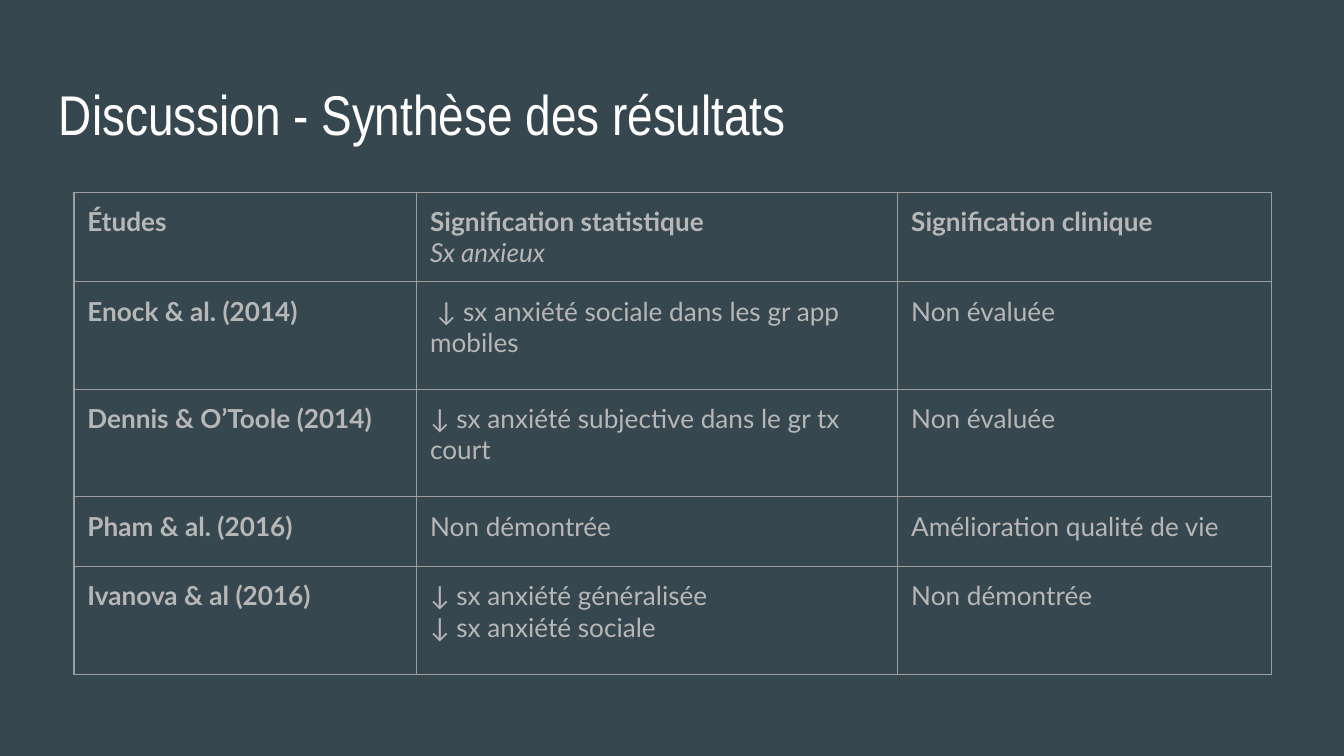
from lxml import etree
from pptx import Presentation
from pptx.dml.color import RGBColor
from pptx.enum.text import MSO_ANCHOR
from pptx.oxml.ns import qn
from pptx.util import Inches, Pt

TOP = MSO_ANCHOR.TOP
EDGE = "9E9E9E"
SIDES = ("left", "right", "top", "bottom")
HEAD = {"name": "Arial Narrow", "size": Pt(30)}
BODY = {"name": "Lato", "size": Pt(14), "bold": False}
BOLD = {**BODY, "bold": True}
NOTE = {**BODY, "italic": True}


def color(code):
    return RGBColor.from_string(code)


def write(para, text, style, code):
    run = para.add_run()
    run.text = text
    for key, value in style.items():
        setattr(run.font, key, value)
    run.font.color.rgb = color(code)


# Widescreen slide, 16 to 9
prs = Presentation()
prs.slide_width = Inches(10)
prs.slide_height = Inches(10 * 9 / 16)
slide = prs.slides.add_slide(prs.slide_layouts[6])
slide.background.fill.solid()
slide.background.fill.fore_color.rgb = color("37474F")

# Title
box = slide.shapes.add_textbox(Inches(0.34), Inches(0.49), Inches(9.32), Inches(0.63))
frame = box.text_frame
frame.word_wrap = True
frame.vertical_anchor = TOP
for side in SIDES:
    setattr(frame, "margin_" + side, Inches(0.1))
write(frame.paragraphs[0], "Discussion - Synthèse des résultats", HEAD, "FFFFFF")

# Study results, one list of lines per cell
rows = [
    (["Études"], ["Signification statistique", "Sx anxieux"], ["Signification clinique"]),
    (["Enock & al. (2014)"], [" ↓ sx anxiété sociale dans les gr app mobiles"], ["Non évaluée"]),
    (["Dennis & O’Toole (2014)"], ["↓ sx anxiété subjective dans le gr tx court"], ["Non évaluée"]),
    (["Pham & al. (2016)"], ["Non démontrée"], ["Amélioration qualité de vie"]),
    (["Ivanova & al (2016)"], ["↓ sx anxiété généralisée", "↓ sx anxiété sociale"], ["Non démontrée"]),
]
widths = [2.55, 3.58, 2.78]
heights = [0.66, 0.8, 0.8, 0.52, 0.8]

# Table grid
table = slide.shapes.add_table(
    len(rows), len(widths), Inches(0.55), Inches(1.43),
    Inches(sum(widths)), Inches(sum(heights))).table
table.horz_banding = False
for col, width in zip(table.columns, widths):
    col.width = Inches(width)
for row, height in zip(table.rows, heights):
    row.height = Inches(height)

# Cell text and borders
for r, row in enumerate(rows):
    for c, lines in enumerate(row):
        cell = table.cell(r, c)
        cell.vertical_anchor = TOP
        for side in SIDES:
            setattr(cell, "margin_" + side, Inches(0.1))
        for i, line in enumerate(lines):
            frame = cell.text_frame
            para = frame.add_paragraph() if i else frame.paragraphs[0]
            if r == 0 and i:
                style = NOTE
            else:
                style = BOLD if r == 0 or c == 0 else BODY
            write(para, line, style, "B7B7B7")
        props = cell._tc.get_or_add_tcPr()
        for tag in ("a:lnL", "a:lnR", "a:lnT", "a:lnB"):
            edge = etree.SubElement(props, qn(tag), w=str(Pt(0.75)))
            fill = etree.SubElement(edge, qn("a:solidFill"))
            etree.SubElement(fill, qn("a:srgbClr"), val=EDGE)
        cell.fill.background()

prs.save("out.pptx")
